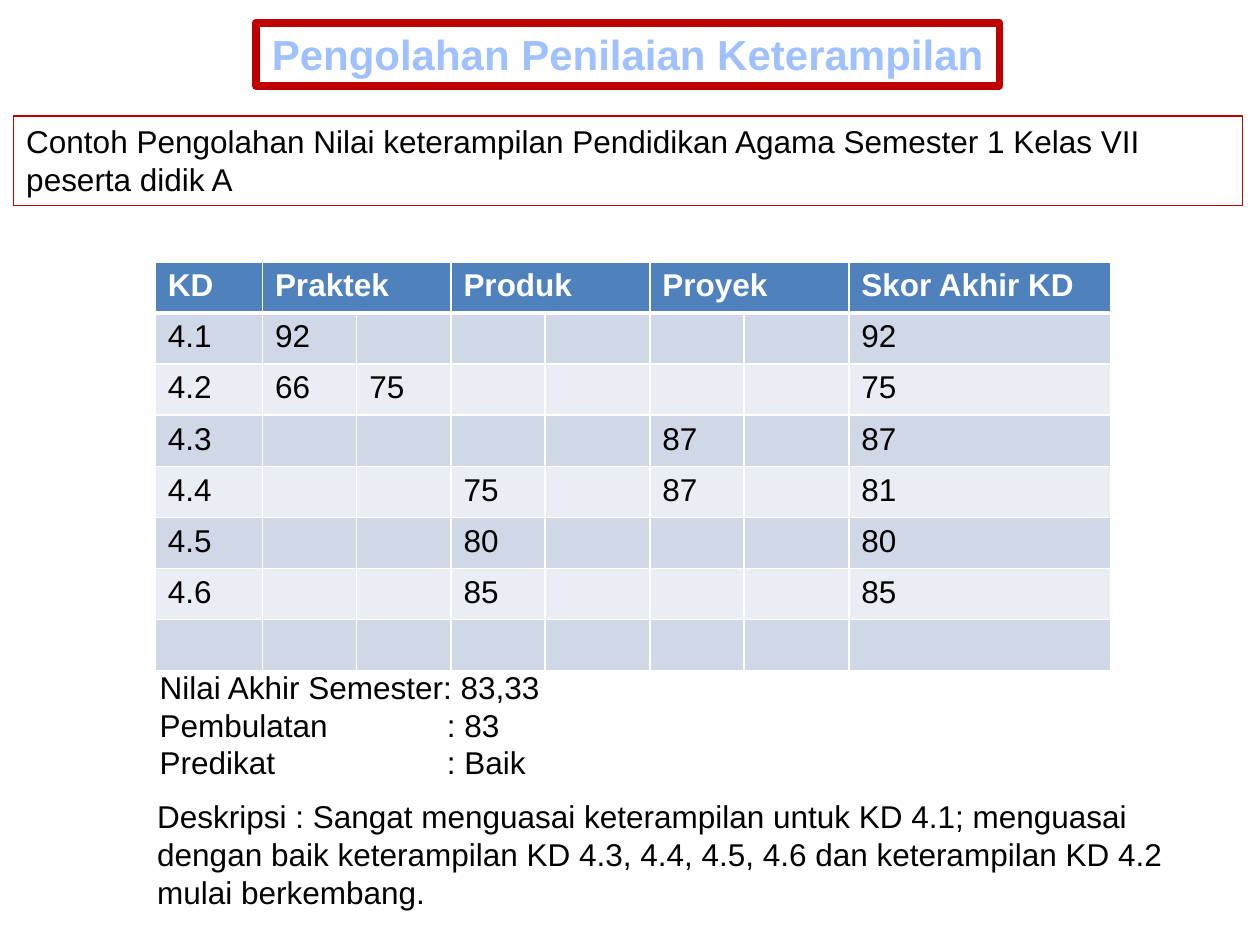
import pptx
import pptx.util
import pptx.dml.color
import pptx.enum.shapes
import pptx.enum.text
import pptx.oxml
import pptx.oxml.ns
import lxml.etree

Cm = pptx.util.Cm
Pt = pptx.util.Pt
qn = pptx.oxml.ns.qn


def tint(code):
    return pptx.dml.color.RGBColor.from_string(code)


def write(para, text, size=18, code="000000", bold=False):
    run = para.add_run()
    run.text = text
    run.font.name = "Arial"
    run.font.size = Pt(size)
    run.font.bold = bold
    run.font.color.rgb = tint(code)


deck = pptx.Presentation()
deck.slide_width = Cm(25.4)
deck.slide_height = Cm(19.05)
slide = deck.slides.add_slide(deck.slide_layouts[6])

boxes = [
    (5.16, 0.46, 14.99, 1.27, 4.5, False, pptx.enum.text.PP_ALIGN.CENTER,
     ("Pengolahan Penilaian Keterampilan", 24, "A0C1FF", True)),
    (0.28, 2.34, 24.77, 1.8, 0.75, True, pptx.enum.text.PP_ALIGN.LEFT,
     ("Contoh Pengolahan Nilai keterampilan Pendidikan Agama Semester 1 Kelas VII peserta didik A",)),
]
for left, top, width, height, line, wrap, align, words in boxes:
    box = slide.shapes.add_shape(
        pptx.enum.shapes.MSO_SHAPE.RECTANGLE, Cm(left), Cm(top), Cm(width), Cm(height))
    box.shadow.inherit = False
    box.fill.background()
    box.line.color.rgb = tint("C00000")
    box.line.width = Pt(line)
    frame = box.text_frame
    frame.word_wrap = wrap
    frame.vertical_anchor = pptx.enum.text.MSO_ANCHOR.TOP
    frame.paragraphs[0].alignment = align
    write(frame.paragraphs[0], *words)

rows = [
    ["KD", "Praktek", "", "Produk", "", "Proyek", "", "Skor Akhir KD"],
    ["4.1", "92", "", "", "", "", "", "92"],
    ["4.2", "66", "75", "", "", "", "", "75"],
    ["4.3", "", "", "", "", "87", "", "87"],
    ["4.4", "", "", "75", "", "87", "", "81"],
    ["4.5", "", "", "80", "", "", "", "80"],
    ["4.6", "", "", "85", "", "", "", "85"],
    [""] * 8,
]
wides = [2.16, 1.9, 1.9, 1.9, 2.11, 1.9, 2.11, 5.28]
tall = 1.03
table = slide.shapes.add_table(
    len(rows), len(wides), Cm(3.13), Cm(5.28), Cm(sum(wides)), Cm(tall * len(rows))).table
for col, wide in zip(table.columns, wides):
    col.width = Cm(wide)
for r, row in enumerate(rows):
    table.rows[r].height = Cm(tall)
    for c, text in enumerate(row):
        cell = table.cell(r, c)
        props = cell._tc.get_or_add_tcPr()
        for side in "LRTB":
            thick = 3 if (r, side) in [(0, "B"), (1, "T")] else 1
            edge = lxml.etree.SubElement(props, qn("a:ln" + side), w=str(Pt(thick)))
            fill = lxml.etree.SubElement(edge, qn("a:solidFill"))
            lxml.etree.SubElement(fill, qn("a:srgbClr"), val="FFFFFF")
        cell.fill.solid()
        cell.fill.fore_color.rgb = tint("4F81BD" if r == 0 else ["E9EDF4", "D0D8E8"][r % 2])
        if text:
            write(cell.text_frame.paragraphs[0], text,
                  code="000000" if r else "FFFFFF", bold=r == 0)
for c in (1, 3, 5):
    table.cell(0, c).merge(table.cell(0, c + 1))

notes = [
    (2.97, 13.34, 15.88, 2.57,
     ["Nilai Akhir Semester: 83,33", "Pembulatan\t: 83", "Predikat\t: Baik"]),
    (2.92, 15.95, 21.59, 2.57,
     ["Deskripsi : Sangat menguasai keterampilan untuk KD 4.1; menguasai dengan baik "
      "keterampilan KD 4.3, 4.4, 4.5, 4.6 dan keterampilan KD 4.2 mulai berkembang."]),
]
for left, top, width, height, lines in notes:
    frame = slide.shapes.add_textbox(Cm(left), Cm(top), Cm(width), Cm(height)).text_frame
    frame.word_wrap = True
    for n, text in enumerate(lines):
        para = frame.add_paragraph() if n else frame.paragraphs[0]
        if "\t" in text:
            tabs = lxml.etree.SubElement(para._p.get_or_add_pPr(), qn("a:tabLst"))
            lxml.etree.SubElement(tabs, qn("a:tab"), pos=str(Cm(5.79)), algn="l")
        write(para, text)

deck.save("out.pptx")
